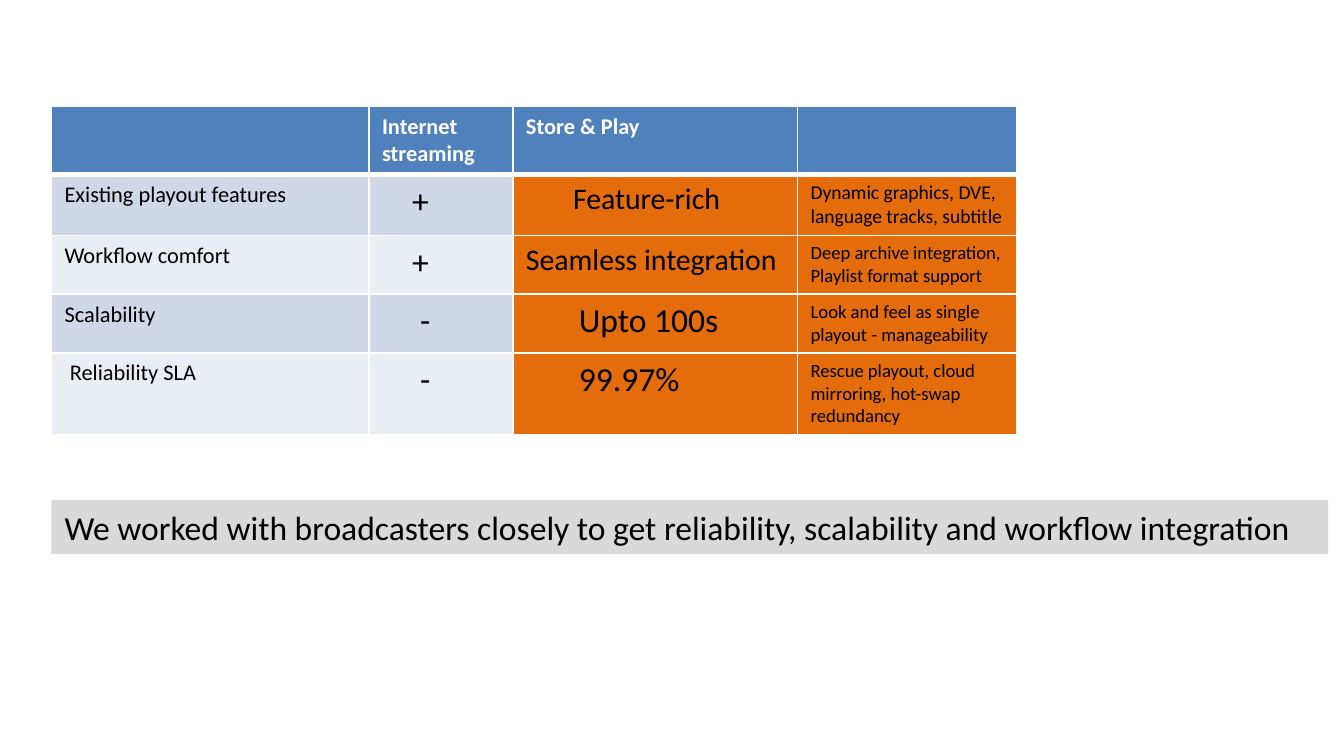
from lxml import etree
from pptx import Presentation
from pptx.dml.color import RGBColor
from pptx.enum.text import MSO_AUTO_SIZE, PP_ALIGN
from pptx.oxml.ns import qn
from pptx.util import Cm, Pt

LEFT = PP_ALIGN.LEFT
FIT_SHAPE = MSO_AUTO_SIZE.SHAPE_TO_FIT_TEXT

FONT = "Calibri"
WHITE = RGBColor(0xFF, 0xFF, 0xFF)
BLACK = RGBColor(0x00, 0x00, 0x00)
BLUE = RGBColor(0x4F, 0x81, 0xBD)
BAND_DARK = RGBColor(0xD0, 0xD8, 0xE8)
BAND_LIGHT = RGBColor(0xE9, 0xED, 0xF4)
ORANGE = RGBColor(0xE4, 0x6C, 0x0A)
GREY = RGBColor(0xD9, 0xD9, 0xD9)

CELL_MARGIN = 0.25
COLUMN_WIDTHS = (6.0, 2.72, 5.38, 4.14)
HEADINGS = ("", "Internet streaming", "Store & Play", "")
# Each cell: text, size in points, indent in cm
ROWS = (
    (("Existing playout features", 12, 0), ("+", 18, 0.57), ("Feature-rich", 16, 0.89),
     ("Dynamic graphics, DVE, language tracks, subtitle", 10.5, 0)),
    (("Workflow comfort", 12, 0), ("+", 18, 0.57), ("Seamless integration", 16, 0),
     ("Deep archive integration,\nPlaylist format support", 10, 0)),
    (("Scalability", 12, 0), ("-", 18, 0.72), ("Upto 100s", 18, 1),
     ("Look and feel as single playout - manageability", 10, 0)),
    (("Reliability SLA", 12, 0.1), ("-", 18, 0.72), ("99.97%", 18, 1),
     ("Rescue playout, cloud mirroring, hot-swap redundancy", 10, 0)),
)


def write_text(frame, text, size, color=BLACK, bold=False):
    """Fill a text frame, one paragraph for each line of text."""
    for index, line in enumerate(text.split("\n")):
        para = frame.add_paragraph() if index else frame.paragraphs[0]
        para.alignment = LEFT
        span = para.add_run()
        span.text = line
        span.font.name = FONT
        span.font.size = Pt(size)
        span.font.bold = bold
        span.font.color.rgb = color


def set_borders(cell, top=1, bottom=1):
    """Draw white cell borders; top and bottom widths are in points."""
    properties = cell._tc.get_or_add_tcPr()
    for side, width in (("L", 1), ("R", 1), ("T", top), ("B", bottom)):
        line = etree.SubElement(properties, qn(f"a:ln{side}"), w=str(Pt(width)))
        fill = etree.SubElement(line, qn("a:solidFill"))
        etree.SubElement(fill, qn("a:srgbClr"), val=str(WHITE))


def format_cell(cell, text, size, fill, indent=0, color=BLACK, bold=False, top=1, bottom=1):
    set_borders(cell, top, bottom)
    cell.fill.solid()
    cell.fill.fore_color.rgb = fill
    cell.margin_left = Cm(CELL_MARGIN + indent)
    if text:
        write_text(cell.text_frame, text, size, color, bold)


def add_comparison_table(page, left, top, width, row_height):
    row_count = len(ROWS) + 1
    table = page.shapes.add_table(row_count, len(COLUMN_WIDTHS), Cm(left), Cm(top),
                                  Cm(width), Cm(row_height * row_count)).table
    for column, share in zip(table.columns, COLUMN_WIDTHS):
        column.width = Cm(width * share / sum(COLUMN_WIDTHS))
    for column, heading in enumerate(HEADINGS):
        format_cell(table.cell(0, column), heading, 12, BLUE,
                    color=WHITE, bold=True, bottom=3)
    for row, entries in enumerate(ROWS, start=1):
        band = BAND_DARK if row % 2 else BAND_LIGHT
        for column, (text, size, indent) in enumerate(entries):
            format_cell(table.cell(row, column), text, size,
                        band if column < 2 else ORANGE, indent,
                        top=3 if row == 1 else 1)


def add_summary_bar(page, left, top, width, height):
    box = page.shapes.add_textbox(Cm(left), Cm(top), Cm(width), Cm(height))
    box.fill.solid()
    box.fill.fore_color.rgb = GREY
    frame = box.text_frame
    frame.word_wrap = False
    frame.auto_size = FIT_SHAPE
    write_text(frame, "We worked with broadcasters closely to get reliability, "
                      "scalability and workflow integration", 18)


def main():
    deck = Presentation()
    deck.slide_width = Cm(25.4)
    deck.slide_height = Cm(14.29)
    page = deck.slides.add_slide(deck.slide_layouts[6])
    add_comparison_table(page, 0.97, 2.01, sum(COLUMN_WIDTHS), 1.04)
    add_summary_bar(page, 0.97, 9.45, 24.13, 1.02)
    deck.save("out.pptx")


if __name__ == "__main__":
    main()
